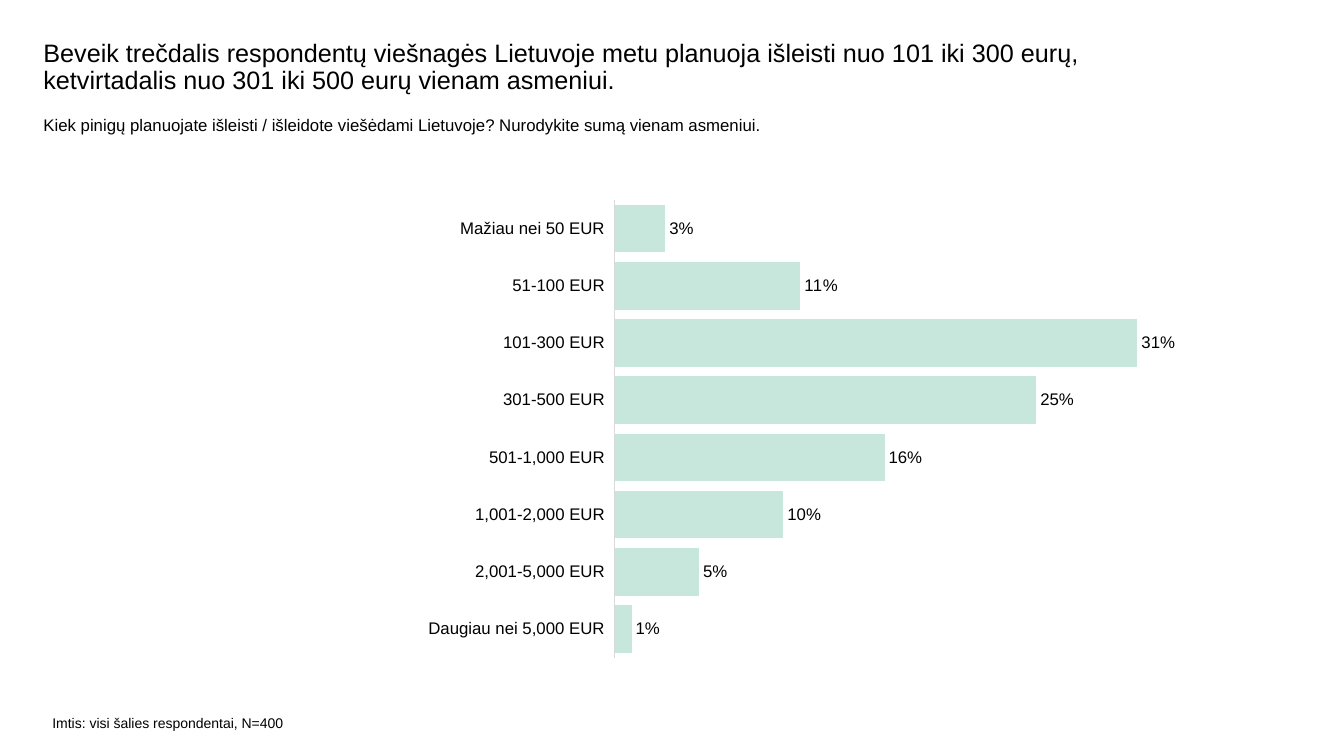
from lxml.etree import SubElement
from pptx import Presentation
from pptx.chart.data import CategoryChartData
from pptx.dml.color import RGBColor
from pptx.enum.chart import XL_CHART_TYPE as ChartType, XL_LABEL_POSITION as LabelPos
from pptx.enum.chart import XL_TICK_LABEL_POSITION as TickLabel, XL_TICK_MARK as Tick
from pptx.enum.text import MSO_ANCHOR as Anchor
from pptx.oxml.ns import qn
from pptx.util import Inches, Pt

BLACK = RGBColor(0x00, 0x00, 0x00)
MINT = RGBColor(0xC7, 0xE6, 0xDC)
AXIS_GREY = RGBColor(0xD9, 0xD9, 0xD9)

SPENDING = {
    "Mažiau nei 50 EUR": 0.03,
    "51-100 EUR": 0.11,
    "101-300 EUR": 0.31,
    "301-500 EUR": 0.25,
    "501-1,000 EUR": 0.16,
    "1,001-2,000 EUR": 0.10,
    "2,001-5,000 EUR": 0.05,
    "Daugiau nei 5,000 EUR": 0.01,
}


def set_font(font, size=12, color=BLACK, name="Arial"):
    font.size, font.name, font.bold = Pt(size), name, False
    font.color.rgb = color


def write(frame, text, spacing=None, **style):
    frame.word_wrap = True
    frame.vertical_anchor = Anchor.TOP
    frame.margin_left = frame.margin_right = frame.margin_top = frame.margin_bottom = 0
    paragraph = frame.paragraphs[0]
    if spacing:
        paragraph.line_spacing = spacing
    run = paragraph.add_run()
    run.text = text
    set_font(run.font, **style)


class SurveySlide:
    """Survey slide whose lengths are given as percentages of its size."""

    def __init__(self, width=13.33, height=7.5):
        self.deck = Presentation()
        self.deck.slide_width, self.deck.slide_height = Inches(width), Inches(height)
        self.slide = self.deck.slides.add_slide(self.deck.slide_layouts[6])

    def place(self, left, top, width, height):
        across, down = self.deck.slide_width / 100, self.deck.slide_height / 100
        return [round(v) for v in (left * across, top * down, width * across, height * down)]

    def text(self, area, words, **style):
        write(self.slide.shapes.add_textbox(*self.place(*area)).text_frame, words, **style)

    def bars(self, area, shares, plot_area):
        data = CategoryChartData(number_format="0%")
        data.categories = list(reversed(shares))
        data.add_series("Series 1", list(reversed(shares.values())))
        chart = self.slide.shapes.add_chart(
            ChartType.BAR_CLUSTERED, *self.place(*area), data).chart
        chart.has_legend = chart.has_title = False
        set_font(chart.font)
        self.style_axes(chart)
        self.style_plot(chart.plots[0])
        self.fix_plot_area(chart, plot_area)

    def style_axes(self, chart):
        spending = chart.category_axis
        spending.major_tick_mark = spending.minor_tick_mark = Tick.NONE
        spending.tick_label_position = TickLabel.LOW
        set_font(spending.tick_labels.font)
        spending.format.line.color.rgb = AXIS_GREY
        spending.format.line.width = Pt(0.75)
        share = chart.value_axis
        share.minimum_scale, share.maximum_scale = 0, 0.35
        share.has_major_gridlines = False
        share.tick_labels.number_format = "0%"
        share.tick_labels.number_format_is_linked = False
        share.visible = False

    def style_plot(self, plot):
        plot.gap_width, plot.vary_by_categories = 20, False
        respondents = plot.series[0]
        respondents.format.fill.solid()
        respondents.format.fill.fore_color.rgb = MINT
        labels = respondents.data_labels
        labels.show_value, labels.position = True, LabelPos.OUTSIDE_END
        labels.number_format, labels.number_format_is_linked = "0%", False
        set_font(labels.font)

    def fix_plot_area(self, chart, plot_area):
        plot = next(chart.element.iter(qn("c:plotArea")))
        for old in plot.findall(qn("c:layout")):
            plot.remove(old)
        layout = SubElement(plot, qn("c:layout"))
        plot.insert(0, layout)
        manual = SubElement(layout, qn("c:manualLayout"))
        settings = {"layoutTarget": "inner", "xMode": "edge", "yMode": "edge"}
        settings.update(zip("xywh", plot_area))
        for tag, value in settings.items():
            SubElement(manual, qn(f"c:{tag}")).set("val", str(value))


def main():
    survey = SurveySlide()
    survey.text((3.23, 5.33, 84.4, 8),
                "Beveik trečdalis respondentų viešnagės Lietuvoje metu planuoja išleisti "
                "nuo 101 iki 300 eurų, ketvirtadalis nuo 301 iki 500 eurų vienam asmeniui.",
                size=18, spacing=0.9)
    survey.text((3.23, 15.2, 89.2, 8.13),
                "Kiek pinigų planuojate išleisti / išleidote viešėdami Lietuvoje? "
                "Nurodykite sumą vienam asmeniui.")
    survey.bars((30.91, 25.2, 59.34, 63.07), SPENDING, (0.25, 0.02, 0.74, 0.96))
    survey.text((3.9, 94.53, 18.98, 3.2), "Imtis: visi šalies respondentai, N=400", size=10)
    survey.deck.save("out.pptx")


if __name__ == "__main__":
    main()
